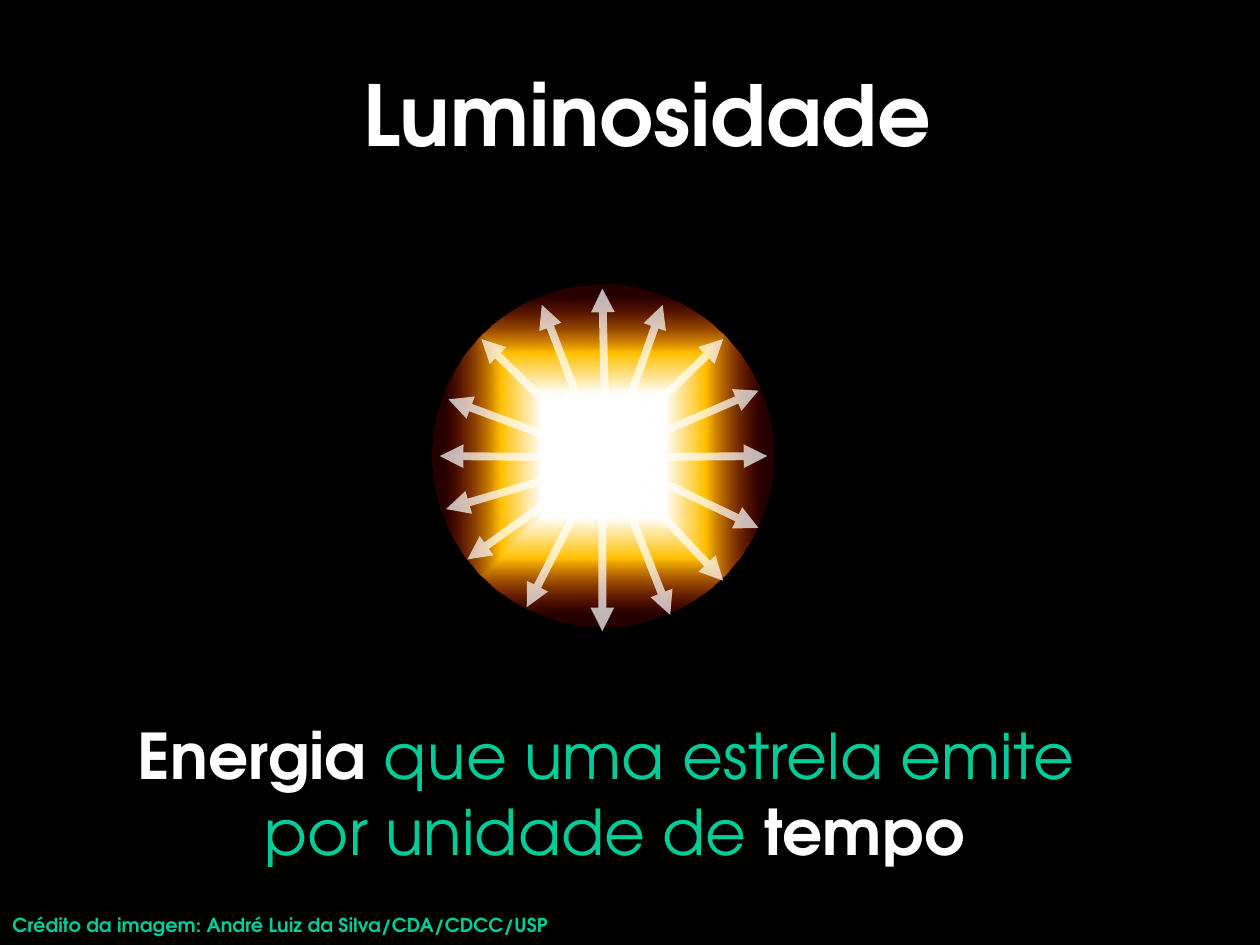
"""Build the slide on stellar luminosity."""
import pptx
import pptx.dml.color
import pptx.enum.shapes
import pptx.enum.text
import pptx.oxml
import pptx.oxml.ns
import pptx.util
from lxml import etree

Pt = pptx.util.Pt
ALIGN = pptx.enum.text.PP_ALIGN
ANCHOR = pptx.enum.text.MSO_ANCHOR

FONT = "TeX Gyre Adventor"
WHITE, GREEN = "FFFFFF", "00CC99"
TEXTS = [
    {"box": (26.6, 33.1, 686.2, 62.6), "size": 48, "align": ALIGN.CENTER,
     "anchor": ANCHOR.MIDDLE, "lines": [[("Luminosidade", WHITE, True)]]},
    {"box": (0, 518.4, 711.4, 20.9), "size": 11, "align": ALIGN.LEFT,
     "anchor": ANCHOR.TOP,
     "lines": [[("Crédito da imagem: André Luiz da Silva/CDA/CDCC/USP", GREEN, True)]]},
    {"box": (25.2, 406.1, 652.3, 94.3), "size": 36, "align": ALIGN.CENTER,
     "anchor": ANCHOR.TOP,
     "lines": [[("Energia ", WHITE, True), ("que uma estrela emite ", GREEN, False)],
               [("por unidade de ", GREEN, False), ("tempo", WHITE, True)]]},
]
STAR = (247, 162.7, 195.1, 195.1)
STAR_STOPS = [(36, "FFFFFF", 100), (60, "FFC000", 100), (93, "C00000", 19)]
RAY_WIDTH, RAY_ALPHA = 4.5, 71
RAYS = [
    (346.3, 261.4, 344.2, 164.9), (345.6, 267.8, 309.6, 174.2),
    (344.9, 260.6, 413.3, 193.7), (344.9, 262.8, 275, 193.7),
    (348.5, 264.2, 383, 351.4), (344.2, 260.6, 344.2, 360.7),
    (345.6, 259.9, 301, 347), (346.3, 260.6, 413.3, 331.9),
    (342, 261.4, 438.5, 260.6), (344.9, 261.4, 433.4, 223.2),
    (345.6, 259.9, 433.4, 301.7), (347.8, 261.4, 378.7, 174.2),
    (343.4, 265, 254.9, 290.9), (345.6, 261.4, 256.3, 228.2),
    (350.6, 261.4, 251.3, 260.6), (344.2, 264.2, 267.1, 319.7),
]


def rgb(value):
    return pptx.dml.color.RGBColor.from_string(value)


def add(parent, tag, **attrs):
    return etree.SubElement(parent, pptx.oxml.ns.qn(tag), attrs)


def add_text(s, item):
    tf = s.shapes.add_textbox(*map(Pt, item["box"])).text_frame
    for name, value in {"word_wrap": True, "vertical_anchor": item["anchor"]}.items():
        setattr(tf, name, value)
    for i, line in enumerate(item["lines"]):
        p = tf.add_paragraph() if i else tf.paragraphs[0]
        p.alignment = item["align"]
        for text, color, bold in line:
            r = p.add_run()
            r.text = text
            r.font.color.rgb = rgb(color)
            for name, value in {"name": FONT, "size": Pt(item["size"]), "bold": bold}.items():
                setattr(r.font, name, value)


def add_star(s):
    sp = s.shapes.add_shape(pptx.enum.shapes.MSO_SHAPE.OVAL, *map(Pt, STAR))
    sp.shadow.inherit = False
    sp.line.fill.background()
    sp.fill.background()
    grad = etree.Element(pptx.oxml.ns.qn("a:gradFill"), rotWithShape="1")
    stops = add(grad, "a:gsLst")
    for pos, color, alpha in STAR_STOPS:
        stop = add(stops, "a:gs", pos=str(pos * 1000))
        add(add(stop, "a:srgbClr", val=color), "a:alpha", val=str(alpha * 1000))
    add(add(grad, "a:path", path="shape"), "a:fillToRect",
        **dict.fromkeys("ltrb", "50000"))
    spPr = sp._element.spPr
    spPr.replace(spPr.find(pptx.oxml.ns.qn("a:noFill")), grad)


def add_ray(s, ends):
    c = s.shapes.add_connector(pptx.enum.shapes.MSO_CONNECTOR.STRAIGHT, *map(Pt, ends))
    c.line.width = Pt(RAY_WIDTH)
    c.line.color.rgb = rgb(WHITE)
    spPr = c._element.spPr
    ln = spPr.find(pptx.oxml.ns.qn("a:ln"))
    color = ln.find(".//" + pptx.oxml.ns.qn("a:srgbClr"))
    add(color, "a:alpha", val=str(RAY_ALPHA * 1000))
    add(ln, "a:tailEnd", type="triangle")
    add(spPr, "a:effectLst")


def main():
    prs = pptx.Presentation()
    prs.slide_width, prs.slide_height = Pt(720), Pt(540)
    s = prs.slides.add_slide(prs.slide_layouts[6])
    s.background.fill.solid()
    s.background.fill.fore_color.rgb = rgb("000000")
    for item in TEXTS:
        add_text(s, item)
    add_star(s)
    for ends in RAYS:
        add_ray(s, ends)
    prs.save("out.pptx")


if __name__ == "__main__":
    main()
